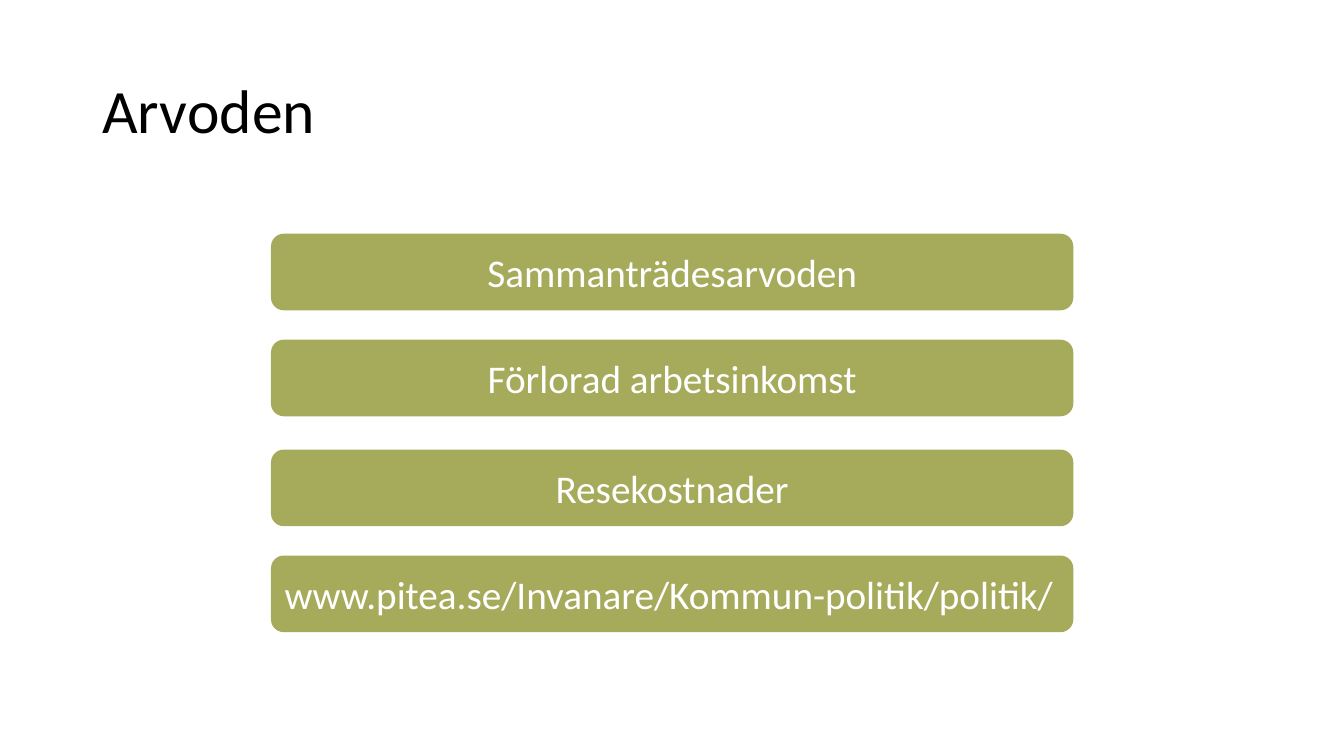
from dataclasses import dataclass

import pptx
import pptx.dml.color
import pptx.enum.shapes
import pptx.enum.text
import pptx.util

Cm = pptx.util.Cm
Align = pptx.enum.text.PP_ALIGN

FONT = "Calibri"
GREEN = "A6AB5C"
WHITE = "FFFFFF"
BLACK = "000000"
LEFT, WIDTH, HEIGHT = 6.83, 20.22, 1.93


@dataclass
class Bar:
    text: str
    top: float
    align: Align = Align.CENTER


BARS = [
    Bar("Sammanträdesarvoden", 5.89),
    Bar("Förlorad arbetsinkomst", 8.56),
    Bar("Resekostnader", 11.33),
    Bar("www.pitea.se/Invanare/Kommun-politik/politik/", 14, Align.LEFT),
]


def paint(target, color: str) -> None:
    """Give a fill or a font a solid colour."""
    if hasattr(target, "solid"):
        target.solid()
        target.fore_color.rgb = pptx.dml.color.RGBColor.from_string(color)
    else:
        target.color.rgb = pptx.dml.color.RGBColor.from_string(color)


def write(shape, text: str, size: int, color: str, align: Align) -> None:
    frame = shape.text_frame
    frame.word_wrap = True
    frame.vertical_anchor = pptx.enum.text.MSO_ANCHOR.MIDDLE
    frame.text = text
    line = frame.paragraphs[0]
    line.alignment = align
    line.font.name = FONT
    line.font.size = pptx.util.Pt(size)
    paint(line.font, color)


def add_title(slide, text: str) -> None:
    box = slide.shapes.add_textbox(Cm(2.33), Cm(1.01), Cm(29.21), Cm(3.68))
    write(box, text, 44, BLACK, Align.LEFT)
    box.text_frame.paragraphs[0].line_spacing = 0.9


def add_bar(slide, bar: Bar) -> None:
    shape = slide.shapes.add_shape(
        pptx.enum.shapes.MSO_SHAPE.ROUNDED_RECTANGLE,
        Cm(LEFT), Cm(bar.top), Cm(WIDTH), Cm(HEIGHT))
    shape.shadow.inherit = False
    paint(shape.fill, GREEN)
    shape.line.fill.background()
    write(shape, bar.text, 28, WHITE, bar.align)


def main() -> None:
    deck = pptx.Presentation()
    deck.slide_width, deck.slide_height = Cm(33.87), Cm(19.05)
    slide = deck.slides.add_slide(deck.slide_layouts[6])
    add_title(slide, "Arvoden")
    for bar in BARS:
        add_bar(slide, bar)
    deck.save("out.pptx")


if __name__ == "__main__":
    main()
